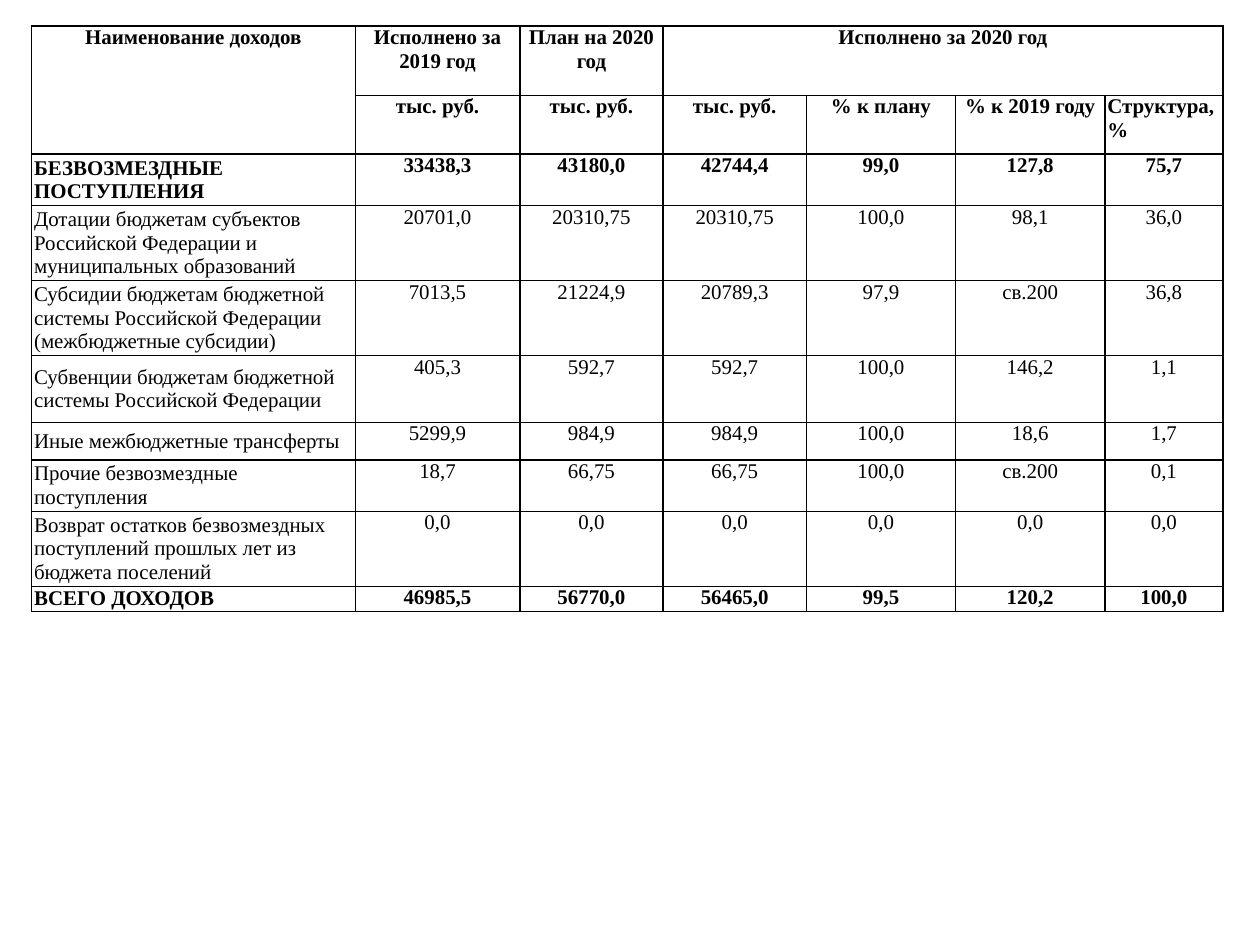
import lxml.etree
import pptx
import pptx.dml.color
import pptx.enum.text
import pptx.oxml.ns
import pptx.util

Cm = pptx.util.Cm
ALIGN = pptx.enum.text.PP_ALIGN
ANCHOR = pptx.enum.text.MSO_ANCHOR

BLACK, WHITE = "000000", "FFFFFF"
COLUMN_WIDTHS = [6.55, 3.33, 2.9, 2.9, 3.02, 3.02, 2.39]
ROW_HEIGHTS = [1.4, 1.19, 1.04, 1.52, 1.52, 1.35, 0.76, 1.04, 1.52, 0.51]
HEADER_ROWS = 2
BOLD_ROWS = {0, 1, 2, 9}
UNIT = "тыс. руб."
INCOME_ROWS = [
    ["Наименование доходов", "Исполнено за 2019 год", "План на 2020 год",
     "Исполнено за 2020 год", "", "", ""],
    ["", UNIT, UNIT, UNIT, "% к плану", "% к 2019 году", "Структура, %"],
    ["БЕЗВОЗМЕЗДНЫЕ ПОСТУПЛЕНИЯ",
     "33438,3", "43180,0", "42744,4", "99,0", "127,8", "75,7"],
    ["Дотации бюджетам субъектов Российской Федерации и муниципальных образований",
     "20701,0", "20310,75", "20310,75", "100,0", "98,1", "36,0"],
    ["Субсидии бюджетам бюджетной системы Российской Федерации (межбюджетные субсидии)",
     "7013,5", "21224,9", "20789,3", "97,9", "св.200", "36,8"],
    ["Субвенции бюджетам бюджетной системы Российской Федерации",
     "405,3", "592,7", "592,7", "100,0", "146,2", "1,1"],
    ["Иные межбюджетные трансферты",
     "5299,9", "984,9", "984,9", "100,0", "18,6", "1,7"],
    ["Прочие безвозмездные поступления",
     "18,7", "66,75", "66,75", "100,0", "св.200", "0,1"],
    ["Возврат остатков безвозмездных поступлений прошлых лет из бюджета поселений"]
    + ["0,0"] * 6,
    ["ВСЕГО ДОХОДОВ",
     "46985,5", "56770,0", "56465,0", "99,5", "120,2", "100,0"],
]
CELL_FORMAT = {"margin_left": Cm(0.05), "margin_right": Cm(0.05),
               "margin_top": 0, "margin_bottom": 0}
FONT_FORMAT = {"name": "Times New Roman", "size": pptx.util.Pt(12)}


def rgb(color):
    return pptx.dml.color.RGBColor.from_string(color)


def apply_format(target, values):
    for name, value in values.items():
        setattr(target, name, value)


def add_borders(cell, color, width):
    qn = pptx.oxml.ns.qn
    properties = cell._tc.get_or_add_tcPr()
    for side in ("a:lnL", "a:lnR", "a:lnT", "a:lnB"):
        line = lxml.etree.SubElement(properties, qn(side), w=str(pptx.util.Pt(width)))
        fill = lxml.etree.SubElement(line, qn("a:solidFill"))
        lxml.etree.SubElement(fill, qn("a:srgbClr"), val=color)


def fill_cell(cell, text, bold, align, anchor):
    add_borders(cell, BLACK, 1)
    cell.fill.solid()
    cell.fill.fore_color.rgb = rgb(WHITE)
    apply_format(cell, {**CELL_FORMAT, "vertical_anchor": anchor})
    para = cell.text_frame.paragraphs[0]
    para.alignment = align
    apply_format(para.font, {**FONT_FORMAT, "bold": bold})
    if text:
        span = para.add_run()
        span.text = text
        apply_format(span.font, {**FONT_FORMAT, "bold": bold})
        span.font.color.rgb = rgb(BLACK)


def add_income_table(page, left, top, width, height):
    """Scale the column and row proportions to the given box."""
    table = page.shapes.add_table(len(ROW_HEIGHTS), len(COLUMN_WIDTHS),
                                  left, top, width, height).table
    apply_format(table, {"first_row": False, "horz_banding": False})
    for column, share in zip(table.columns, COLUMN_WIDTHS):
        column.width = round(width * share / sum(COLUMN_WIDTHS))
    for row, share in zip(table.rows, ROW_HEIGHTS):
        row.height = round(height * share / sum(ROW_HEIGHTS))

    last_column = len(COLUMN_WIDTHS) - 1
    for row_index, texts in enumerate(INCOME_ROWS):
        for column_index, text in enumerate(texts):
            is_name = column_index == 0 and row_index >= HEADER_ROWS
            is_share_header = (row_index, column_index) == (1, last_column)
            fill_cell(table.cell(row_index, column_index), text,
                      row_index in BOLD_ROWS,
                      ALIGN.LEFT if is_name or is_share_header else ALIGN.CENTER,
                      ANCHOR.MIDDLE if is_name else ANCHOR.TOP)
    table.cell(0, 0).merge(table.cell(1, 0))
    table.cell(0, 3).merge(table.cell(0, last_column))


def main():
    deck = pptx.Presentation()
    deck.slide_width, deck.slide_height = Cm(25.5), Cm(19.05)
    page = deck.slides.add_slide(deck.slide_layouts.get_by_name("Blank"))
    add_income_table(page, Cm(0.64), Cm(0.53), Cm(24.11), Cm(11.85))
    deck.save("out.pptx")


if __name__ == "__main__":
    main()
